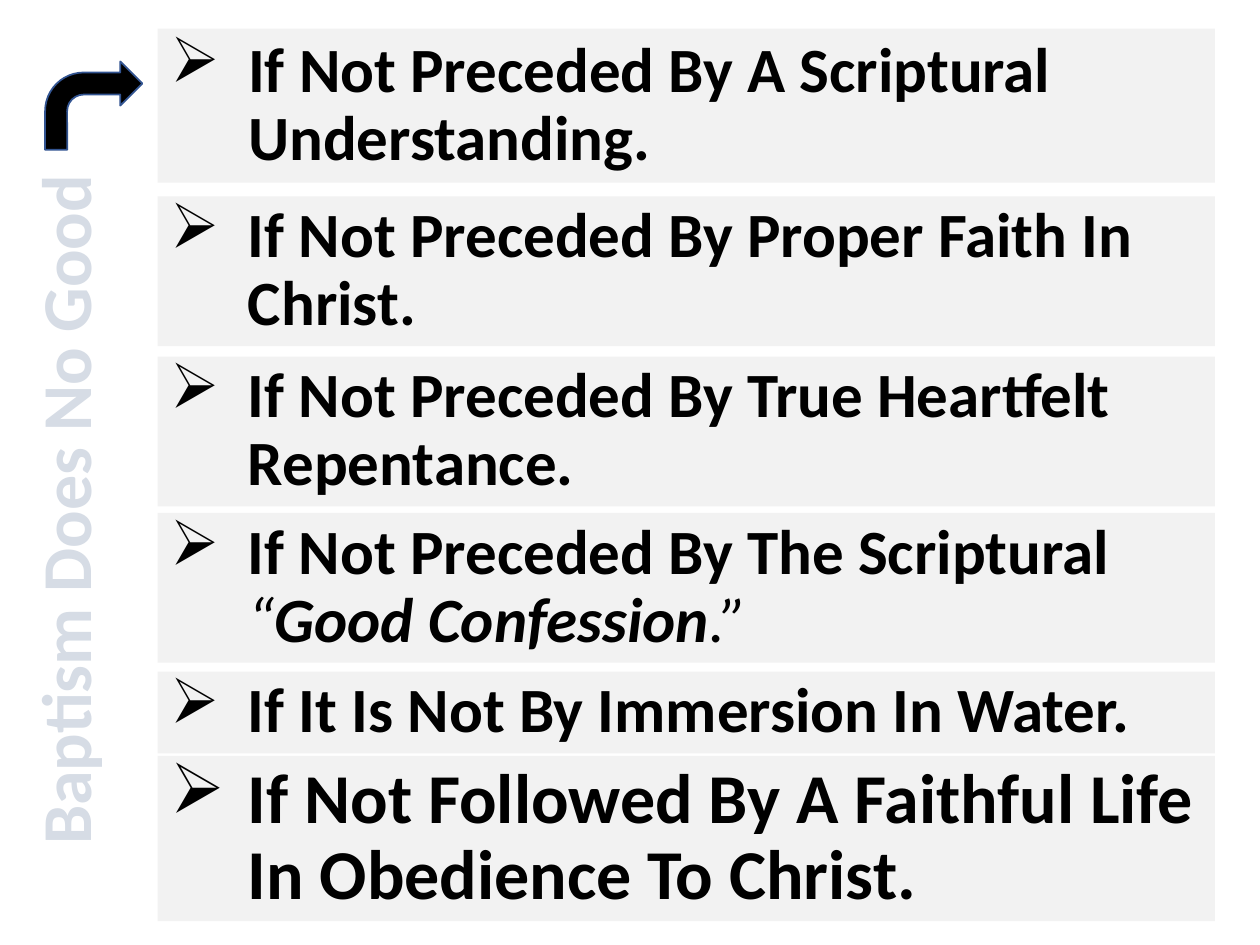
from lxml.etree import SubElement
from pptx import Presentation
from pptx.dml.color import RGBColor
from pptx.enum.dml import MSO_PATTERN
from pptx.enum.shapes import MSO_SHAPE
from pptx.enum.text import MSO_ANCHOR, MSO_AUTO_SIZE, PP_ALIGN
from pptx.oxml import parse_xml
from pptx.oxml.ns import nsdecls, qn
from pptx.util import Cm, Pt

BLACK = RGBColor(0x00, 0x00, 0x00)
GREY = RGBColor(0xF2, 0xF2, 0xF2)
SLATE = RGBColor(0x44, 0x54, 0x6A)
PALE = RGBColor(0xD6, 0xDC, 0xE5)
NAVY = RGBColor(0x32, 0x54, 0x91)

SIDE = "Baptism Does No Good"
# top and height in cm, text size, runs of (text, bold, italic)
ITEMS = [
    (0.58, 3.1, 36, [("If Not Preceded By A Scriptural Understanding.", True, False)]),
    (3.96, 3.02, 36, [("If Not Preceded By Proper Faith In Christ.", True, False)]),
    (7.19, 3.02, 36, [("If Not Preceded By True Heartfelt Repentance.", True, False)]),
    (10.34, 3.02, 36, [("If Not Preceded By The Scriptural ", True, False),
                       ("“", False, True), ("Good Confession", True, True),
                       (".”", False, True)]),
    (13.54, 1.65, 36, [("If It Is Not By Immersion In Water.", True, False)]),
    (15.24, 3.33, 40, [("If Not Followed By A Faithful Life In Obedience To Christ.",
                        True, False)]),
]
LEFT, WIDTH, INDENT = Cm(3.18), Cm(21.31), Cm(1.57)


def write(shape, runs, size, align=PP_ALIGN.LEFT, anchor=MSO_ANCHOR.MIDDLE,
          space=None, bullet=None):
    frame = shape.text_frame
    frame.word_wrap = True
    frame.auto_size = MSO_AUTO_SIZE.SHAPE_TO_FIT_TEXT
    frame.vertical_anchor = anchor
    para = frame.paragraphs[0]
    if bullet:
        props = para._p.get_or_add_pPr()
        props.set("marL", str(INDENT))
        props.set("indent", str(-INDENT))
        SubElement(props, qn("a:buChar")).set("char", bullet)
    para.alignment = align
    if space:
        para.line_spacing = space
    for text, bold, italic in runs:
        run = para.add_run()
        run.text = text
        font = run.font
        font.name, font.size = "Calibri", Pt(size)
        font.bold, font.italic = bold, italic
        font.color.rgb = BLACK
    return para


def hatch(run):
    """Give the letters a striped fill and a thin outline."""
    fill = run.font.fill
    fill.patterned()
    fill.pattern = MSO_PATTERN.DARK_UPWARD_DIAGONAL
    fill.fore_color.rgb, fill.back_color.rgb = SLATE, PALE
    line = parse_xml(f'<a:ln {nsdecls("a")} w="12700"><a:solidFill>'
                     '<a:srgbClr val="333F50"/></a:solidFill></a:ln>')
    run._r.get_or_add_rPr().insert(0, line)


def main():
    deck = Presentation()
    deck.slide_width, deck.slide_height = Cm(25.4), Cm(19.05)
    slide = deck.slides.add_slide(deck.slide_layouts[5])
    shapes = slide.shapes

    side = shapes.add_textbox(Cm(-5.92), Cm(9.3), Cm(14.4), Cm(1.96))
    side.rotation = 270
    label = write(side, [(SIDE, True, False)], 40, align=PP_ALIGN.CENTER,
                  anchor=MSO_ANCHOR.TOP)
    hatch(label.runs[0])

    arrow = shapes.add_shape(MSO_SHAPE.BENT_ARROW, Cm(0.91), Cm(1.24), Cm(1.96), Cm(1.78))
    arrow.shadow.inherit = False
    arrow.fill.solid()
    arrow.fill.fore_color.rgb = BLACK
    arrow.line.color.rgb, arrow.line.width = NAVY, Pt(1)

    for i, (top, height, size, runs) in enumerate(ITEMS):
        if i == 0:
            box = shapes.title
            box.left, box.top, box.width, box.height = LEFT, Cm(top), WIDTH, Cm(height)
        else:
            box = shapes.add_shape(MSO_SHAPE.RECTANGLE, LEFT, Cm(top), WIDTH, Cm(height))
            box.shadow.inherit = False
        box.fill.solid()
        box.fill.fore_color.rgb = GREY
        box.line.fill.background()
        write(box, runs, size, space=0.9, bullet="➢")

    deck.save("out.pptx")


if __name__ == "__main__":
    main()
